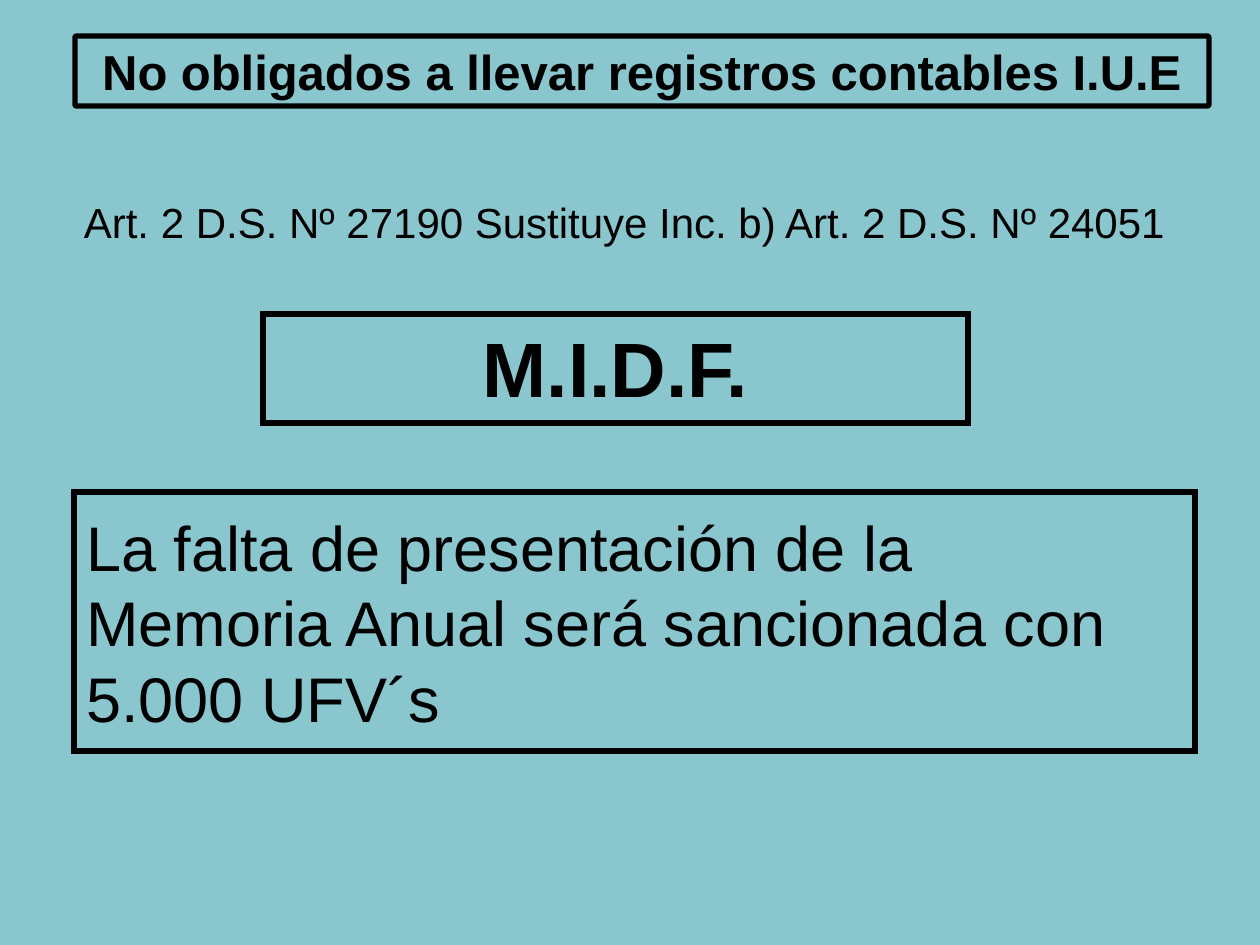
from dataclasses import dataclass

from lxml.etree import SubElement
from pptx import Presentation
from pptx.dml.color import RGBColor
from pptx.enum.shapes import MSO_SHAPE
from pptx.enum.text import MSO_ANCHOR, PP_ALIGN
from pptx.oxml.ns import qn
from pptx.util import Pt

PX = 914400 // 126  # EMU per pixel


@dataclass(frozen=True)
class Theme:
    background: RGBColor = RGBColor(0x8A, 0xC6, 0xCD)
    ink: RGBColor = RGBColor(0, 0, 0)
    font: str = "Arial"
    title: int = 28
    citation: int = 24
    form: int = 44
    penalty: int = 36
    border: int = 3


THEME = Theme()


def scale(box):
    return [length * PX for length in box]


def add_frame(slide, box, kind=MSO_SHAPE.RECTANGLE):
    """Unfilled box with a black border."""
    shape = slide.shapes.add_shape(kind, *scale(box))
    shape.shadow.inherit = False
    shape.fill.background()
    shape.line.color.rgb = THEME.ink
    shape.line.width = Pt(THEME.border)
    if kind == MSO_SHAPE.RECTANGLE:  # sharp corners
        properties = shape.element.spPr.find(qn("a:ln"))
        SubElement(properties, qn("a:miter"), lim="800000")
    return shape


def write(shape, text, size, bold=False, align=PP_ALIGN.CENTER, wrap=True):
    frame = shape.text_frame
    frame.text = text
    frame.word_wrap = wrap
    frame.vertical_anchor = MSO_ANCHOR.MIDDLE
    for paragraph in frame.paragraphs:
        paragraph.alignment = align
        for run in paragraph.runs:
            run.font.name = THEME.font
            run.font.size = Pt(size)
            run.font.bold = bold
            run.font.color.rgb = THEME.ink
    return frame


def add_title(slide, box):
    shape = add_frame(slide, box, MSO_SHAPE.ROUNDED_RECTANGLE)
    shape.adjustments[0] = 0.02
    write(shape, "No obligados a llevar registros contables I.U.E", THEME.title, bold=True)


def add_citation(slide, box):
    shape = slide.shapes.add_textbox(*scale(box))
    frame = write(shape, "Art. 2 D.S. Nº 27190 Sustituye Inc. b) Art. 2 D.S. Nº 24051",
                  THEME.citation, wrap=False)
    frame.margin_left = frame.margin_right = 0
    frame.margin_top = frame.margin_bottom = 0


def add_form_name(slide, box):
    frame = write(add_frame(slide, box), "M.I.D.F.", THEME.form, bold=True)
    frame.vertical_anchor = MSO_ANCHOR.TOP


def add_penalty(slide, box):
    lines = ["La falta de presentación de la",
             "Memoria Anual será sancionada con",
             "5.000 UFV´s"]
    write(add_frame(slide, box), "\n".join(lines), THEME.penalty, align=PP_ALIGN.LEFT)


def main():
    presentation = Presentation()
    presentation.slide_width, presentation.slide_height = scale((1260, 945))
    slide = presentation.slides.add_slide(presentation.slide_layouts[6])
    slide.background.fill.solid()
    slide.background.fill.fore_color.rgb = THEME.background

    add_form_name(slide, (263, 314, 705, 109))
    add_title(slide, (75, 36, 1134, 70))
    add_citation(slide, (83, 197, 1083, 49))
    add_penalty(slide, (74, 492, 1121, 259))
    presentation.save("out.pptx")


if __name__ == "__main__":
    main()
